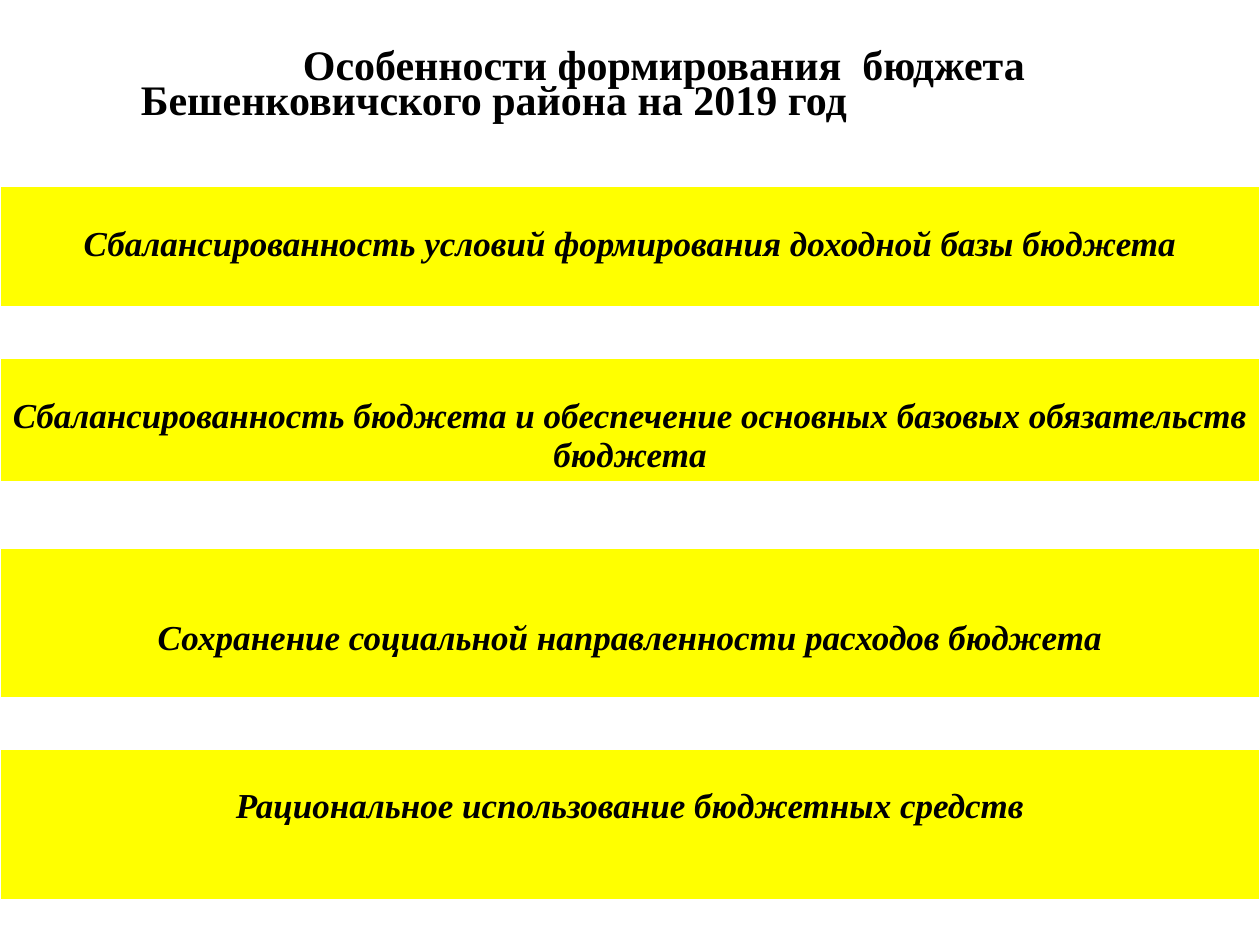
"""Build a slide on how the district budget for 2019 is formed."""
import pptx
import pptx.dml.color
import pptx.enum.text
import pptx.oxml
import pptx.oxml.ns
import pptx.util

Cm, Pt = pptx.util.Cm, pptx.util.Pt
ALIGN = pptx.enum.text.PP_ALIGN


def color(value):
    return pptx.dml.color.RGBColor.from_string(value)


def write(paragraph, text, size=20, italic=False, align=ALIGN.CENTER, spacing=None):
    paragraph.alignment = align
    paragraph.line_spacing = spacing
    run = paragraph.add_run()
    run.text = text
    run.font.name = "Times New Roman"
    run.font.size = Pt(size)
    run.font.bold = True
    run.font.italic = italic
    run.font.color.rgb = color("000000")


deck = pptx.Presentation()
deck.slide_width, deck.slide_height = Cm(25.4), Cm(19.05)
slide = deck.slides.add_slide(deck.slide_layouts[6])

heading = slide.shapes.add_textbox(Cm(2.59), Cm(0.79), Cm(21.59), Cm(3.38)).text_frame
heading.word_wrap = True
heading.margin_top = Cm(0.3)
heading.vertical_anchor = pptx.enum.text.MSO_ANCHOR.TOP
write(heading.paragraphs[0], "Особенности формирования  бюджета", size=24, spacing=Pt(20))
write(heading.add_paragraph(), "Бешенковичского района на 2019 год", size=24,
      align=ALIGN.LEFT, spacing=Pt(20))

# (row height, text, space above the text)
bands = [
    (2.45, "Сбалансированность условий формирования доходной базы бюджета", 0.78),
    (1.02, "", 0),
    (2.46, "Сбалансированность бюджета и обеспечение основных базовых обязательств бюджета", 0.78),
    (1.34, "", 0),
    (3.02, "Сохранение социальной направленности расходов бюджета", 1.43),
    (1.03, "", 0),
    (3.04, "Рациональное использование бюджетных средств", 0.78),
]
total_height = sum(height for height, _, _ in bands)
features = slide.shapes.add_table(len(bands), 2, Cm(0), Cm(3.76), Cm(25.4), Cm(total_height)).table
features.first_row = features.horz_banding = False

for index, (height, text, space_above) in enumerate(bands):
    features.rows[index].height = Cm(height)
    for cell in features.rows[index].cells:
        cell.margin_top, cell.margin_bottom = Cm(space_above), Cm(0)
        cell.margin_left = cell.margin_right = Cm(0.2)
        properties = cell._tc.get_or_add_tcPr()
        for side in "LRTB":
            thick = (index, side) in ((0, "B"), (1, "T"))
            properties.append(pptx.oxml.parse_xml(
                f'<a:ln{side} {pptx.oxml.ns.nsdecls("a")} w="{Pt(3 if thick else 1)}">'
                f'<a:solidFill><a:srgbClr val="FFFFFF"/></a:solidFill></a:ln{side}>'))
        cell.fill.solid()
        cell.fill.fore_color.rgb = color("FFFF00" if text else "FFFFFF")
    if index != 1:
        features.cell(index, 0).merge(features.cell(index, 1))
    if text:
        write(features.cell(index, 0).text_frame.paragraphs[0], text, italic=True)

deck.save("out.pptx")
